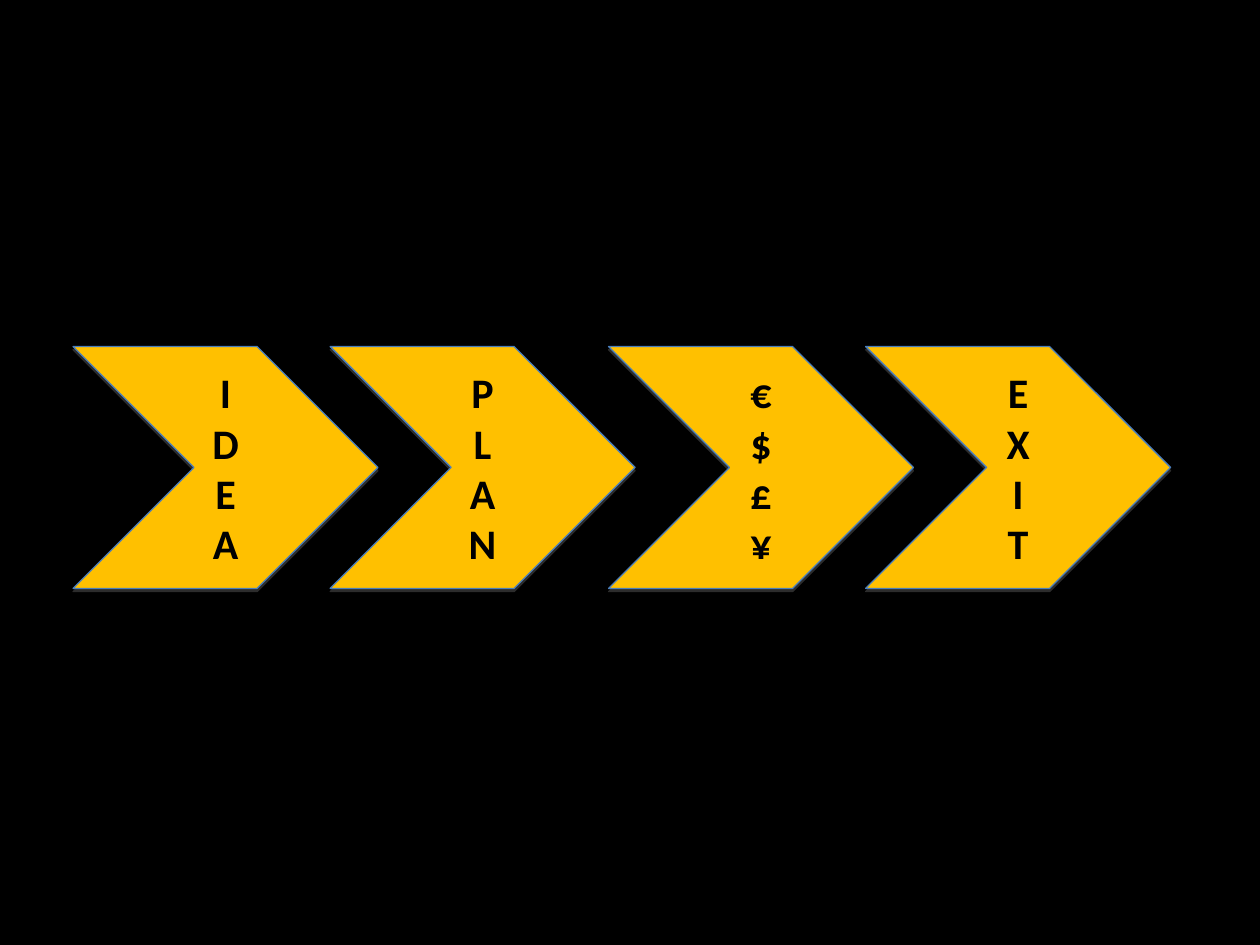
from lxml.etree import SubElement
from pptx import Presentation
from pptx.dml.color import RGBColor
from pptx.enum.shapes import MSO_SHAPE
from pptx.enum.text import MSO_ANCHOR, PP_ALIGN
from pptx.oxml.ns import qn
from pptx.util import Inches, Pt

# Content: two pairs of steps, one letter a line
PAIRS = [("IDEA", "PLAN"), ("€$£¥", "EXIT")]

BLACK = RGBColor(0x00, 0x00, 0x00)
GOLD = RGBColor(0xFF, 0xC0, 0x00)
BLUE = RGBColor(0x4A, 0x7E, 0xBB)
GREY = RGBColor(0x80, 0x80, 0x80)

# Grid in inches
LEFT, TOP = 0.58, 2.75
WIDE, HIGH = 2.42, 1.92
STEP, PAIR = 2.04, 4.25


def write(shape, text, size=24, color=BLACK, bold=True, font="Calibri"):
    """Stack the letters of text, one paragraph each."""
    frame = shape.text_frame
    frame.word_wrap = True
    frame.vertical_anchor = MSO_ANCHOR.MIDDLE
    for row, sign in enumerate(text):
        para = frame.add_paragraph() if row else frame.paragraphs[0]
        para.alignment = PP_ALIGN.CENTER
        run = para.add_run()
        run.text = sign
        run.font.name, run.font.size = font, Pt(size)
        run.font.bold, run.font.color.rgb = bold, color


def shade(shape, drop=1.8, alpha=35):
    """Cast a sharp shadow straight down."""
    shape.shadow.inherit = False
    list_ = shape.element.spPr.find(qn("a:effectLst"))
    cast = SubElement(list_, qn("a:outerShdw"), blurRad="0",
                      dist=str(Pt(drop)), dir=str(90 * 60000),
                      rotWithShape="0")
    tint = SubElement(cast, qn("a:srgbClr"), val=str(GREY))
    SubElement(tint, qn("a:alpha"), val=str(alpha * 1000))


def arrow(slide, left, text):
    shape = slide.shapes.add_shape(
        MSO_SHAPE.CHEVRON, Inches(left), Inches(TOP),
        Inches(WIDE), Inches(HIGH))
    shape.adjustments[0] = 0.5
    shape.fill.solid()
    shape.fill.fore_color.rgb = GOLD
    shape.line.color.rgb = BLUE
    shape.line.width = Pt(0.75)
    shade(shape)
    write(shape, text)


def main():
    deck = Presentation()
    deck.slide_width, deck.slide_height = Inches(10), Inches(7.5)
    slide = deck.slides.add_slide(deck.slide_layouts[6])

    # Black backdrop
    back = slide.background.fill
    back.solid()
    back.fore_color.rgb = BLACK

    # Row of arrows, with a wider gap between the pairs
    for i, pair in enumerate(PAIRS):
        for j, text in enumerate(pair):
            arrow(slide, LEFT + i * PAIR + j * STEP, text)

    deck.save("out.pptx")


if __name__ == "__main__":
    main()
